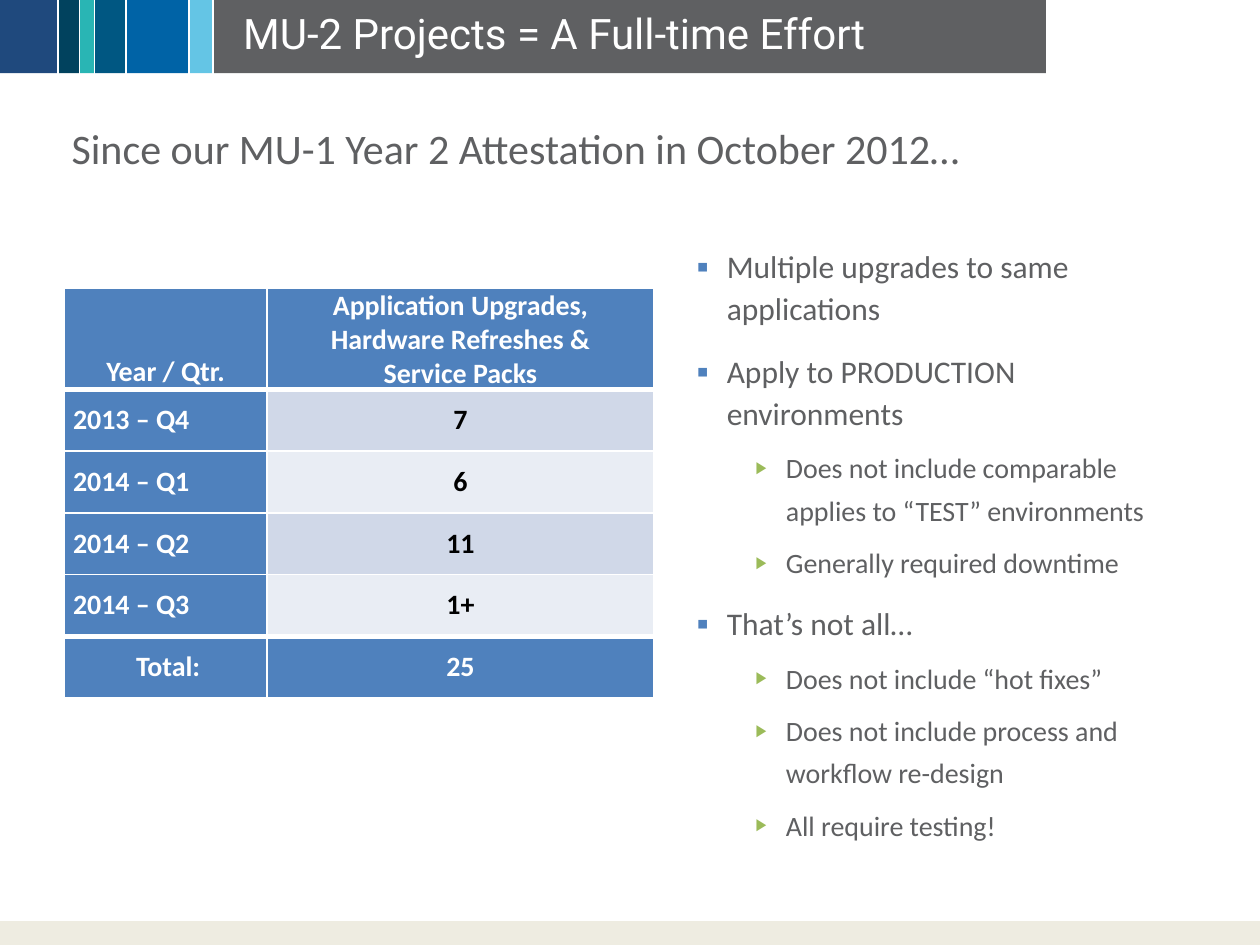
import pptx
import pptx.util
import pptx.dml.color
import pptx.enum.shapes
import pptx.enum.text
import pptx.oxml
import pptx.oxml.ns
import lxml.etree

Inches = pptx.util.Inches
Pt = pptx.util.Pt
RGBColor = pptx.dml.color.RGBColor
Align = pptx.enum.text.PP_ALIGN
Anchor = pptx.enum.text.MSO_ANCHOR
qn = pptx.oxml.ns.qn

WHITE = RGBColor(0xFF, 0xFF, 0xFF)
BLACK = RGBColor(0, 0, 0)
GREY = RGBColor(0x5F, 0x60, 0x62)
BLUE = RGBColor(0x4F, 0x81, 0xBD)
GREEN = RGBColor(0x9B, 0xBB, 0x59)
NAVY = RGBColor(0x1F, 0x49, 0x7D)
INK = RGBColor(0x01, 0x42, 0x5E)
TEAL = RGBColor(0x29, 0xB5, 0xB4)
DEEP = RGBColor(0x00, 0x57, 0x82)
ROYAL = RGBColor(0x00, 0x63, 0xA6)
SKY = RGBColor(0x64, 0xC5, 0xE5)
CREAM = RGBColor(0xEE, 0xEC, 0xE1)
BANDS = [RGBColor(0xD0, 0xD8, 0xE8), RGBColor(0xE9, 0xED, 0xF4)]

BARS = [(0, NAVY), (0.47, INK), (0.63, TEAL), (0.75, DEEP),
        (1, ROYAL), (1.5, SKY), (1.69, GREY), (8.3, None)]
RULES = [(0.46, 1.16), (0.63, 1.61), (0.75, 0.6),
         (1, 1.61), (1.5, 1.61), (1.69, 1.16)]
ROWS = [
    ("Year / Qtr.", "Application Upgrades,\nHardware Refreshes &\nService Packs"),
    ("2013 – Q4", "7"),
    ("2014 – Q1", "6"),
    ("2014 – Q2", "11"),
    ("2014 – Q3", "1+"),
    ("Total:", "25"),
]
POINTS = [
    (0, "Multiple upgrades to same applications"),
    (0, "Apply to PRODUCTION environments"),
    (1, "Does not include comparable applies to “TEST” environments"),
    (1, "Generally required downtime"),
    (0, "That’s not all…"),
    (1, "Does not include “hot fixes”"),
    (1, "Does not include process and workflow re-design"),
    (1, "All require testing!"),
]
LEVELS = [
    dict(size=18, left=0.24, before=12, mark="▪", tint=BLUE, scale=110),
    dict(size=16, left=0.71, before=6, mark="▶", tint=GREEN, scale=60),
]


class Deck:
    def __init__(self, face="Calibri"):
        self.show = pptx.Presentation()
        self.show.slide_width = Inches(10)
        self.show.slide_height = Inches(7.5)
        self.face = face
        self.slide = self.show.slides.add_slide(self.show.slide_layouts[6])

    def font(self, para, size, color, bold=False, face=None):
        font = para.font
        font.name = face or self.face
        font.size = Pt(size)
        font.bold = bold
        font.color.rgb = color

    def bar(self, x, y, w, h, color):
        shape = self.slide.shapes.add_shape(
            pptx.enum.shapes.MSO_SHAPE.RECTANGLE,
            Inches(x), Inches(y), Inches(w), Inches(h))
        shape.shadow.inherit = False
        shape.fill.solid()
        shape.fill.fore_color.rgb = color
        shape.line.fill.background()

    def rule(self, x, end):
        line = self.slide.shapes.add_connector(
            pptx.enum.shapes.MSO_CONNECTOR.STRAIGHT,
            Inches(x), 0, Inches(x), Inches(end))
        line.line.color.rgb = WHITE
        line.line.width = Pt(1)
        lxml.etree.SubElement(line._element.spPr, qn("a:effectLst"))

    def box(self, x, y, w, h):
        frame = self.slide.shapes.add_textbox(
            Inches(x), Inches(y), Inches(w), Inches(h)).text_frame
        frame.word_wrap = True
        return frame

    def label(self, spot, text, color, pitch, face=None, inset=0.1, anchor=Anchor.TOP):
        frame = self.box(*spot)
        frame.margin_left = frame.margin_right = Inches(inset)
        frame.margin_top = frame.margin_bottom = Inches(inset / 2)
        frame.vertical_anchor = anchor
        para = frame.paragraphs[0]
        para.text = text
        para.line_spacing = Pt(pitch)
        self.font(para, 24, color, face=face)
        return frame

    def bullet(self, para, left, mark, tint, scale):
        props = para._p.get_or_add_pPr()
        props.set("marL", str(Inches(left)))
        props.set("indent", str(Inches(-0.24)))
        tone = lxml.etree.SubElement(props, qn("a:buClr"))
        lxml.etree.SubElement(tone, qn("a:srgbClr"), val=str(tint))
        lxml.etree.SubElement(props, qn("a:buSzPct"), val=str(scale * 1000))
        lxml.etree.SubElement(props, qn("a:buFont"), typeface="Arial")
        lxml.etree.SubElement(props, qn("a:buChar"), char=mark)

    def points(self, spot, items):
        frame = self.box(*spot)
        for i, (depth, text) in enumerate(items):
            style = LEVELS[depth]
            para = frame.paragraphs[0] if i == 0 else frame.add_paragraph()
            para.text = text
            para.level = depth
            self.bullet(para, style["left"], style["mark"], style["tint"], style["scale"])
            para.line_spacing = Pt(24)
            if i:
                para.space_before = Pt(style["before"])
            self.font(para, style["size"], GREY)

    def border(self, cell, top, bottom):
        props = cell._tc.get_or_add_tcPr()
        for side, width in zip("LRTB", (1, 1, top, bottom)):
            edge = lxml.etree.SubElement(props, qn("a:ln" + side), w=str(Pt(width)))
            fill = lxml.etree.SubElement(edge, qn("a:solidFill"))
            lxml.etree.SubElement(fill, qn("a:srgbClr"), val=str(WHITE))

    def cell(self, cell, text, fill, color, align, anchor, top, bottom):
        self.border(cell, top, bottom)
        cell.fill.solid()
        cell.fill.fore_color.rgb = fill
        cell.margin_left = cell.margin_right = Inches(0.07)
        cell.margin_top = cell.margin_bottom = 0
        cell.vertical_anchor = anchor
        cell.text = text
        for para in cell.text_frame.paragraphs:
            para.alignment = align
            self.font(para, 16, color, bold=True)

    def table(self, x, y, cols, head, step, rows):
        last = len(rows) - 1
        table = self.slide.shapes.add_table(
            len(rows), len(cols), Inches(x), Inches(y),
            Inches(sum(cols)), Inches(head + step * last)).table
        for col, width in zip(table.columns, cols):
            col.width = Inches(width)
        for r, row in enumerate(rows):
            table.rows[r].height = Inches(step if r else head)
            for c, text in enumerate(row):
                body = c == 1 and 0 < r < last
                self.cell(
                    table.cell(r, c), text,
                    BANDS[(r - 1) % 2] if body else BLUE,
                    BLACK if body else WHITE,
                    Align.CENTER if c or r == 0 else Align.LEFT,
                    Anchor.MIDDLE if r else Anchor.BOTTOM,
                    3 if r in (1, last) else 1,
                    3 if r in (0, last - 1) else 1)
        total = table.cell(last, 0).text_frame.paragraphs[0]
        total._p.get_or_add_pPr().set("marL", str(Inches(0.5)))


def main():
    deck = Deck()
    for (x, color), (end, _) in zip(BARS, BARS[1:]):
        deck.bar(x, 0, end - x, 0.58, color)
    for x, end in RULES:
        deck.rule(x, end)
    deck.bar(0, 7.31, 10, 0.19, CREAM)
    deck.label((1.69, 0, 6.47, 0.58), "MU-2 Projects = A Full-time Effort",
               WHITE, 28, "Roboto", 0.24, Anchor.BOTTOM)
    deck.table(0.51, 2.29, (1.61, 3.07), 0.8, 0.49, ROWS)
    deck.points((5.43, 1.88, 4.17, 4.9), POINTS)
    deck.label((0.47, 0.99, 8.07, 0.44),
               "Since our MU-1 Year 2 Attestation in October 2012…", GREY, 24)
    deck.show.save("out.pptx")


if __name__ == "__main__":
    main()
